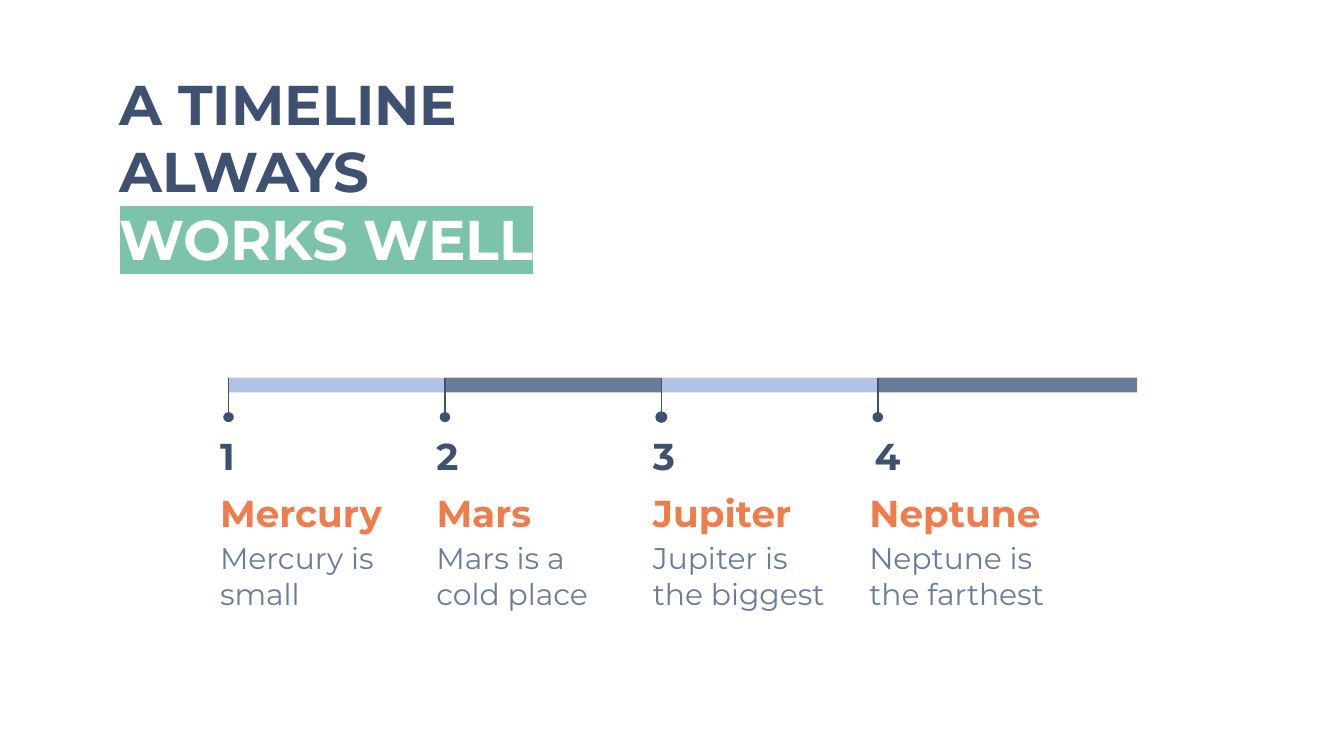
from lxml import etree
from pptx import Presentation
from pptx.dml.color import RGBColor
from pptx.enum.shapes import MSO_CONNECTOR, MSO_SHAPE
from pptx.enum.text import MSO_ANCHOR, MSO_AUTO_SIZE, PP_ALIGN
from pptx.oxml.ns import qn
from pptx.util import Cm, Pt

TOP, MIDDLE = MSO_ANCHOR.TOP, MSO_ANCHOR.MIDDLE
NO_FIT = MSO_AUTO_SIZE.NONE
LEFT = PP_ALIGN.LEFT
RECT, OVAL = MSO_SHAPE.RECTANGLE, MSO_SHAPE.OVAL
STRAIGHT = MSO_CONNECTOR.STRAIGHT

NAVY = RGBColor(0x3F, 0x51, 0x70)
SLATE = RGBColor(0x6B, 0x7C, 0x9B)
SKY = RGBColor(0xB0, 0xC3, 0xE4)
ORANGE = RGBColor(0xEF, 0x7D, 0x4B)
GREEN = RGBColor(0x7B, 0xC3, 0xAA)
WHITE = RGBColor(0xFF, 0xFF, 0xFF)

FONT = "Montserrat"
STEP = 4.09
PLANETS = [
    ("Mercury", "Mercury is small", 0, False),
    ("Mars", "Mars is a cold place", 0, False),
    ("Jupiter", "Jupiter is the biggest", 0, True),
    ("Neptune", "Neptune is the farthest", 0.1, False),
]


def place(shape, x, y, w, h):
    """Move a shape to a box given in centimetres."""
    shape.left, shape.top, shape.width, shape.height = Cm(x), Cm(y), Cm(w), Cm(h)


def write(shape, lines, size, bold=False, anchor=TOP):
    """Fill a text shape with (text, colour) lines and return its paragraphs."""
    frame = shape.text_frame
    frame.text = "\n".join(text for text, _ in lines)
    frame.word_wrap = True
    frame.auto_size = NO_FIT
    frame.vertical_anchor = anchor
    frame.margin_left = frame.margin_right = Cm(0.25)
    frame.margin_top = frame.margin_bottom = Cm(0.25)
    for para, (_, color) in zip(frame.paragraphs, lines):
        para.alignment = LEFT
        para.space_before = Pt(0)
        props = para._p.get_or_add_pPr()
        props.set("marL", "0")
        props.set("indent", "0")
        etree.SubElement(props, qn("a:buNone"))
        font = para.font
        font.name, font.size, font.bold = FONT, Pt(size), bold
        font.color.rgb = color
    return frame.paragraphs


def mark(run, color):
    """Put a highlight colour behind a run."""
    props = run._r.get_or_add_rPr()
    light = etree.SubElement(props, qn("a:highlight"))
    etree.SubElement(light, qn("a:srgbClr"), val=str(color))


def block(slide, kind, color, x, y, w, h):
    """Add a plain filled shape without an outline."""
    shape = slide.shapes.add_shape(kind, Cm(x), Cm(y), Cm(w), Cm(h))
    shape.shadow.inherit = False
    shape.fill.solid()
    shape.fill.fore_color.rgb = color
    shape.line.fill.background()
    return shape


def add_title(title, x, y, w, h):
    """Set the heading with its last line highlighted."""
    place(title, x, y, w, h)
    lines = [("A TIMELINE ALWAYS", NAVY), ("WORKS WELL", WHITE)]
    paras = write(title, lines, 30, True)
    mark(paras[-1].runs[0], GREEN)


def add_pin(slide, x, y, ring):
    """Hang a pin with a round end from the bar."""
    line = slide.shapes.add_connector(STRAIGHT, Cm(x), Cm(y + 0.73), Cm(x), Cm(y))
    line.line.color.rgb = NAVY
    line.line.width = Pt(0.75)
    etree.SubElement(line._element.spPr, qn("a:effectLst"))
    dot = block(slide, OVAL, NAVY, x - 0.1, y + 0.65, 0.2, 0.19)
    if ring:
        dot.line.color.rgb = NAVY
        dot.line.width = Pt(0.75)


def add_stage(slide, head, num, planet, x, y, w):
    """Build one stage: bar, pin, number, name and note."""
    name, note, shift, ring = planet
    block(slide, RECT, SKY if num % 2 else SLATE, x, y, w, 0.28)
    add_pin(slide, x, y, ring)

    left = x - 0.41
    count = slide.shapes.add_textbox(Cm(left + shift), Cm(y + 1.09), Cm(1.12), Cm(0.76))
    write(count, [(str(num), NAVY)], 20, True, MIDDLE)

    place(head, left, y + 1.75, 3.94, 1.07)
    para = write(head, [(name, ORANGE)], 20, True)[0]
    para.line_spacing = 1.15
    para.space_after = Pt(16)

    body = slide.shapes.add_textbox(Cm(left), Cm(y + 2.82), Cm(3.94), Cm(2.49))
    write(body, [(note, SLATE)], 16)


def add_line(slide, heads, x, y, w):
    """Lay the stages side by side, the last one filling the width."""
    last = len(PLANETS) - 1
    for i, (head, planet) in enumerate(zip(heads, PLANETS)):
        width = w - STEP * last if i == last else STEP
        add_stage(slide, head, i + 1, planet, x + STEP * i, y, width)


def main():
    """Build and save the slide."""
    deck = Presentation()
    deck.slide_width, deck.slide_height = Cm(25.4), Cm(14.29)
    slide = deck.slides.add_slide(deck.slide_layouts.get_by_name("Comparison"))
    title, *heads = slide.placeholders
    add_title(title, 2.01, 1.07, 10.01, 1.6)
    add_line(slide, heads, 4.32, 7.14, 17.17)
    deck.save("out.pptx")


if __name__ == "__main__":
    main()
